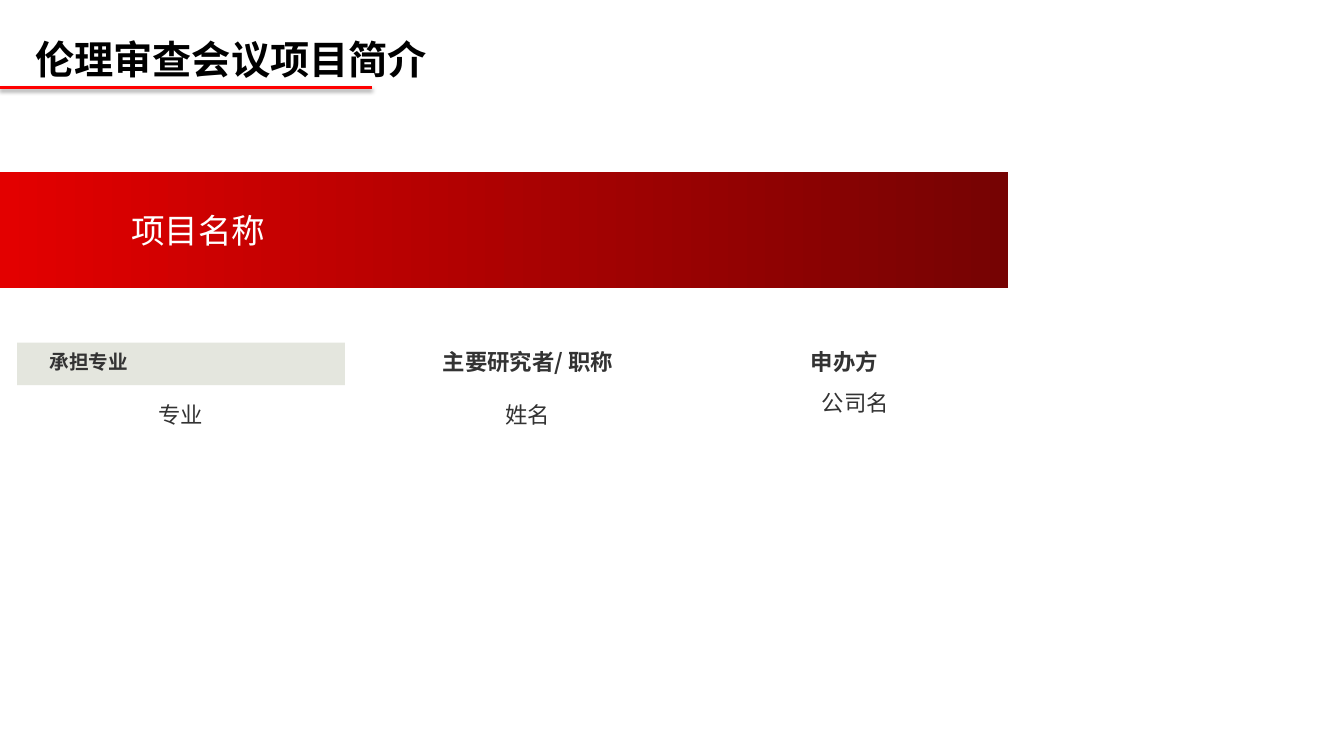
from dataclasses import dataclass

from lxml.etree import SubElement
from pptx import Presentation
from pptx.dml.color import RGBColor as RGB
from pptx.enum.shapes import MSO_CONNECTOR as Connector, MSO_SHAPE as Preset
from pptx.enum.text import MSO_ANCHOR as Anchor, MSO_AUTO_SIZE as AutoSize, PP_ALIGN as Align
from pptx.oxml import parse_xml
from pptx.oxml.ns import nsdecls, qn
from pptx.util import Inches, Pt

TITLE = "伦理审查会议项目简介"
PROJECT = "项目名称"
# heading, heading left, value, value left, value top
COLUMNS = [
    ("承担专业", 0.17, "专业", 0.17, 3.93),
    ("主要研究者/ 职称", 3.61, "姓名", 3.61, 3.93),
    ("申办方", 6.75, "公司名", 6.86, 3.81),
]
HEADING_TOP, CELL_WIDTH, CELL_HEIGHT = 3.4, 3.25, 0.42


@dataclass(frozen=True)
class Theme:
    font: str = "Noto Sans CJK SC"
    title_font: str = "Times New Roman"
    title_size: int = 28
    project_size: int = 24
    text_size: int = 16
    tag_size: int = 14
    black: RGB = RGB(0, 0, 0)
    white: RGB = RGB(255, 255, 255)
    text: RGB = RGB(0x33, 0x33, 0x33)
    rule: RGB = RGB(0xFF, 0, 0)
    banner_start: RGB = RGB(0xE3, 0, 0)
    banner_end: RGB = RGB(0x76, 0x03, 0x03)
    tag: RGB = RGB(0xE4, 0xE6, 0xDE)


THEME = Theme()


def write(shape, text, size=THEME.text_size, color=THEME.text, font=THEME.font, bold=False,
          align=Align.LEFT, anchor=Anchor.TOP, spacing=1.0, insets=(0.1, 0.05, 0.1, 0.05)):
    """Put one formatted paragraph in a shape; insets run left, top, right, bottom."""
    frame = shape.text_frame
    frame.word_wrap = True
    frame.auto_size = AutoSize.NONE
    frame.vertical_anchor = anchor
    frame.margin_left, frame.margin_top, frame.margin_right, frame.margin_bottom = map(Inches, insets)
    paragraph = frame.paragraphs[0]
    paragraph.alignment = align
    paragraph.line_spacing = spacing
    run = paragraph.add_run()
    run.text = text
    run.font.size = Pt(size)
    run.font.bold = bold
    run.font.color.rgb = color
    run.font.name = font
    SubElement(run.font._element, qn("a:ea")).set("typeface", THEME.font)


def place(left, top, width, height):
    return [Inches(length) for length in (left, top, width, height)]


def add_title(slide):
    title = slide.shapes.title
    title.left, title.top, title.width, title.height = place(0.25, 0.33, 11.87, 0.54)
    write(title, TITLE, size=THEME.title_size, color=THEME.black, font=THEME.title_font,
          bold=True, anchor=Anchor.BOTTOM, spacing=0.9)

    rule = slide.shapes.add_connector(Connector.STRAIGHT, *place(0, 0.87, 3.69, 0.87))
    rule.line.color.rgb = THEME.rule
    rule.line.width = Pt(2)
    rule._element.spPr.append(parse_xml(
        f'<a:effectLst {nsdecls("a")}>'
        f'<a:outerShdw blurRad="{Pt(3.1)}" dist="{Pt(1.6)}" dir="5400000" rotWithShape="0">'
        f'<a:srgbClr val="{THEME.black}"><a:alpha val="38000"/></a:srgbClr>'
        '</a:outerShdw></a:effectLst>'))


def add_block(slide, left, top, width, height):
    block = slide.shapes.add_shape(Preset.RECTANGLE, *place(left, top, width, height))
    block.shadow.inherit = False
    block.line.fill.background()
    return block


def add_banner(slide):
    banner = add_block(slide, 0, 1.71, 10, 1.15)
    banner.fill.gradient()
    banner.fill.gradient_angle = 0
    for stop, color in zip(banner.fill.gradient_stops, (THEME.banner_start, THEME.banner_end)):
        stop.color.rgb = color
    write(banner, PROJECT, size=THEME.project_size, color=THEME.white,
          anchor=Anchor.MIDDLE, insets=(1.3, 0.05, 0.3, 0.05))


def add_label(slide, text, left, top, bold=False):
    label = slide.shapes.add_textbox(*place(left, top, CELL_WIDTH, CELL_HEIGHT))
    write(label, text, bold=bold, align=Align.CENTER)


def add_columns(slide):
    for number, (heading, heading_left, value, value_left, value_top) in enumerate(COLUMNS):
        if number == 0:
            tag = add_block(slide, heading_left, HEADING_TOP, CELL_WIDTH, CELL_HEIGHT)
            tag.fill.solid()
            tag.fill.fore_color.rgb = THEME.tag
            write(tag, heading, size=THEME.tag_size, bold=True, spacing=0.9,
                  insets=(0.32, 0.1, 0.3, 0.1))
        else:
            add_label(slide, heading, heading_left, HEADING_TOP, bold=True)
        add_label(slide, value, value_left, value_top)


def main():
    deck = Presentation()
    deck.slide_width, deck.slide_height = Inches(13.33), Inches(7.5)
    slide = deck.slides.add_slide(deck.slide_layouts.get_by_name("Title Only"))
    add_title(slide)
    add_banner(slide)
    add_columns(slide)
    deck.save("out.pptx")


if __name__ == "__main__":
    main()
